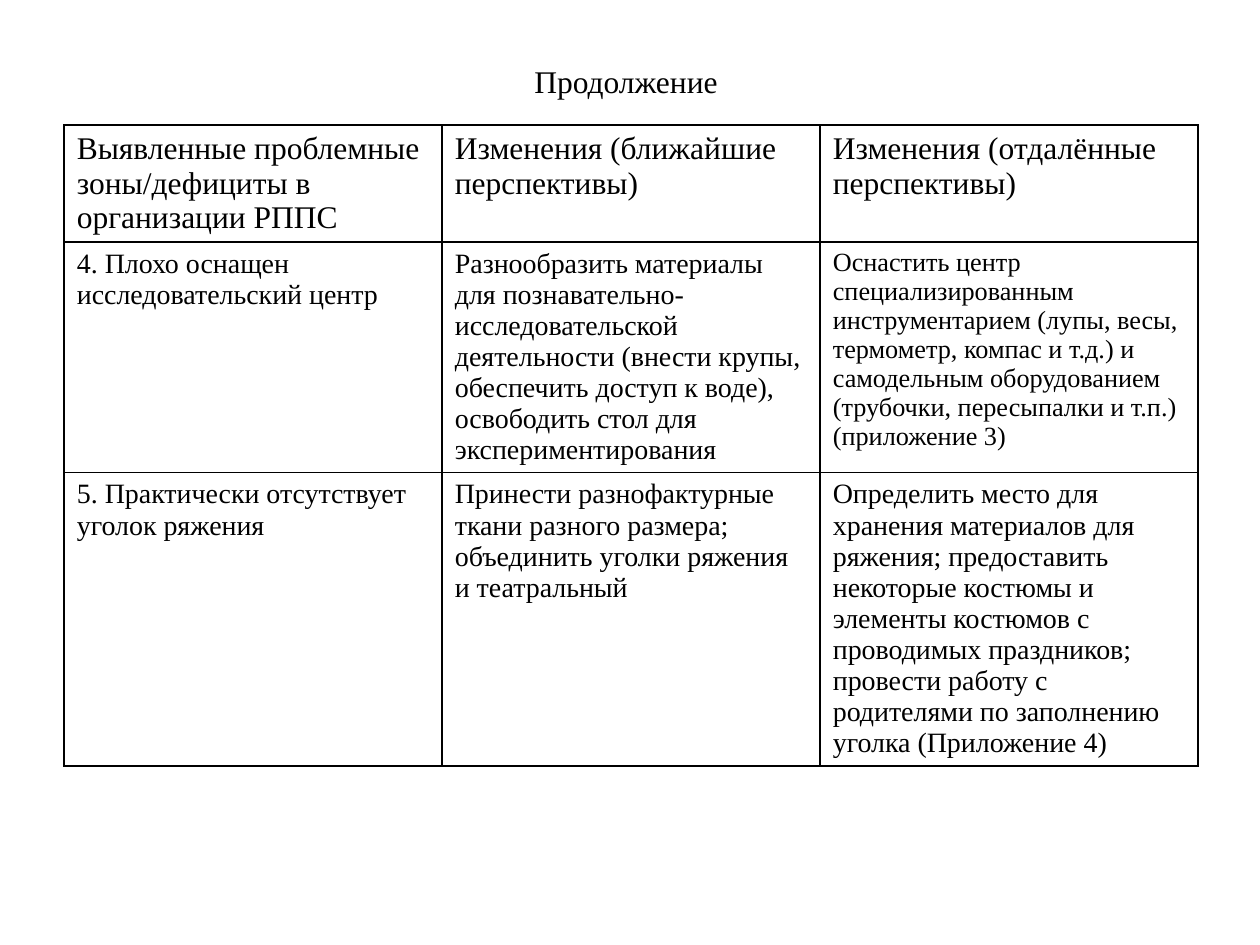
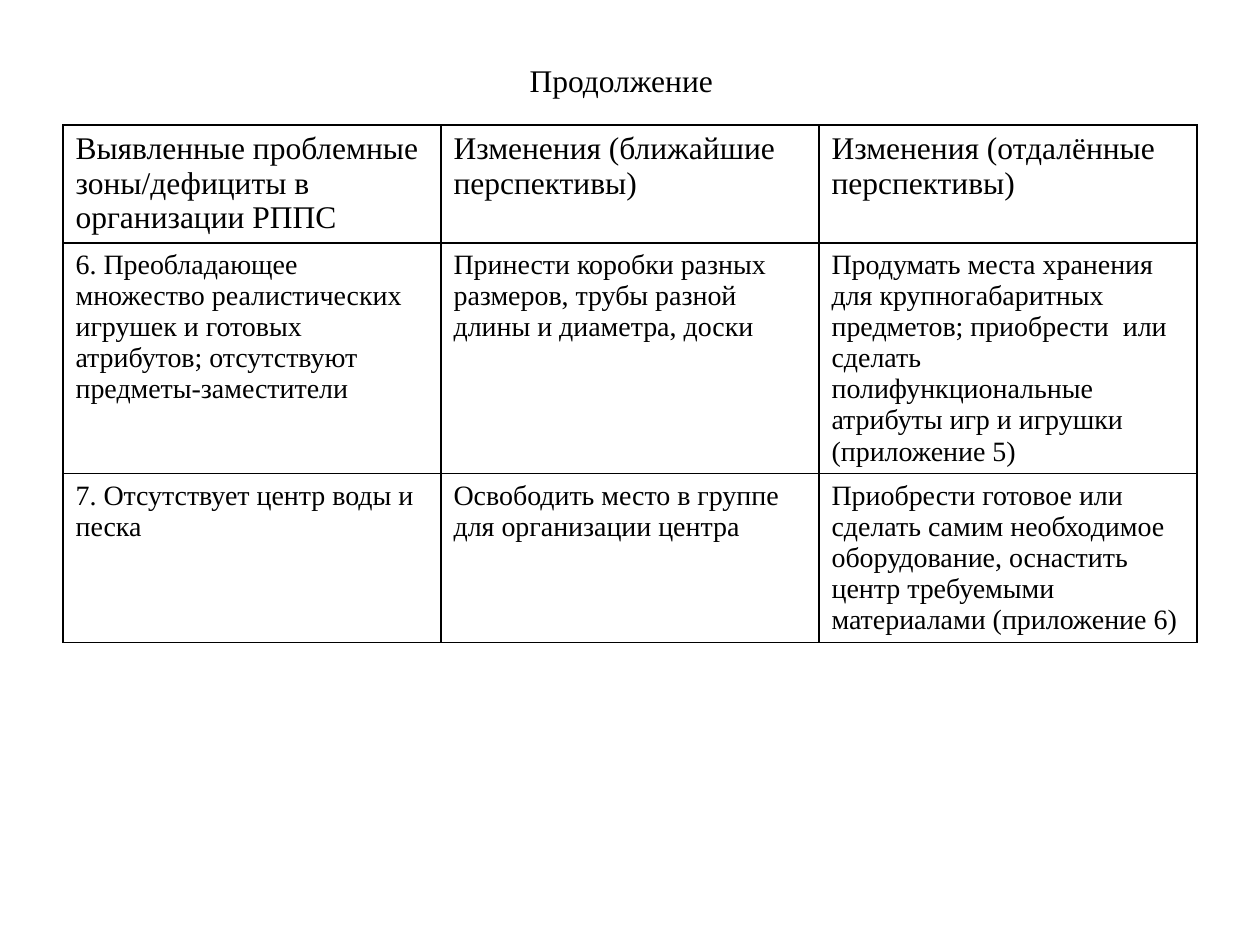
from lxml import etree
from pptx import Presentation
from pptx.dml.color import RGBColor
from pptx.enum.text import MSO_ANCHOR, MSO_AUTO_SIZE, PP_ALIGN
from pptx.oxml.ns import qn
from pptx.util import Inches, Pt

CENTER = PP_ALIGN.CENTER
MIDDLE = MSO_ANCHOR.MIDDLE
NO_AUTOFIT = MSO_AUTO_SIZE.NONE

BLACK = RGBColor(0x00, 0x00, 0x00)
WHITE = RGBColor(0xFF, 0xFF, 0xFF)
FONT = "Times New Roman"
TITLE_LAYOUT = 5
HEADER_SIZE, BODY_SIZE = 18, 16
BORDER_WIDTH = Pt(1)

TITLE = "Продолжение"
HEADINGS = [
    "Выявленные проблемные зоны/дефициты в организации РППС",
    "Изменения (ближайшие перспективы)",
    "Изменения (отдалённые перспективы)",
]
EQUIPMENT_AND_COSTUMES = [
    [
        "4. Плохо оснащен исследовательский центр",
        "Разнообразить материалы для познавательно-исследовательской "
        "деятельности (внести крупы, обеспечить доступ к воде), "
        "освободить стол для экспериментирования",
        "Оснастить центр специализированным инструментарием (лупы, весы, "
        "термометр, компас и т.д.) и самодельным оборудованием "
        "(трубочки, пересыпалки и т.п.) (приложение 3)",
    ],
    [
        "5. Практически отсутствует уголок ряжения",
        "Принести разнофактурные ткани разного размера; "
        "объединить уголки ряжения и театральный",
        "Определить место для хранения материалов для ряжения; предоставить "
        "некоторые костюмы и элементы костюмов с проводимых праздников; "
        "провести работу с родителями по заполнению уголка (Приложение 4)",
    ],
]
TOYS_AND_WATER = [
    [
        "6. Преобладающее множество реалистических игрушек и готовых "
        "атрибутов; отсутствуют предметы-заместители",
        "Принести коробки разных размеров, трубы разной длины и диаметра, доски",
        "Продумать места хранения для крупногабаритных предметов; приобрести  "
        "или сделать полифункциональные атрибуты игр и игрушки (приложение 5)",
    ],
    [
        "7. Отсутствует центр воды и песка",
        "Освободить место в группе для организации центра",
        "Приобрести готовое или сделать самим необходимое оборудование, "
        "оснастить центр требуемыми материалами (приложение 6)",
    ],
]


def style_run(run, size, font=FONT):
    run.font.name = font
    run.font.size = Pt(size)
    run.font.color.rgb = BLACK


def add_title(slide, box, space_font, space_size):
    """Centred title; its closing space sets the line height."""
    title = slide.shapes.title
    title.left, title.top, title.width, title.height = map(Inches, box)
    frame = title.text_frame
    frame.auto_size = NO_AUTOFIT
    frame.vertical_anchor = MIDDLE
    frame.text = TITLE
    line = frame.paragraphs[0]
    line.alignment = CENTER
    style_run(line.runs[0], HEADER_SIZE)
    space = line.add_run()
    space.text = " "
    style_run(space, space_size, space_font)


def add_borders(cell):
    properties = cell._tc.get_or_add_tcPr()
    for side in ("lnL", "lnR", "lnT", "lnB"):
        line = etree.SubElement(properties, qn(f"a:{side}"), w=str(BORDER_WIDTH))
        fill = etree.SubElement(line, qn("a:solidFill"))
        etree.SubElement(fill, qn("a:srgbClr"), val=str(BLACK))


def fill_cell(cell, text, size):
    add_borders(cell)
    cell.fill.solid()
    cell.fill.fore_color.rgb = WHITE
    cell.text_frame.text = text
    style_run(cell.text_frame.paragraphs[0].runs[0], size)


def add_plan_table(slide, left, top, width, row_heights, problems, special_sizes):
    """Header row, then one row per problem, in equal columns."""
    rows = [HEADINGS] + problems
    table = slide.shapes.add_table(
        len(rows), len(HEADINGS), Inches(left), Inches(top),
        Inches(width), Inches(sum(row_heights))).table
    for column in table.columns:
        column.width = Inches(width / len(HEADINGS))
    for r, (texts, height) in enumerate(zip(rows, row_heights)):
        table.rows[r].height = Inches(height)
        row_size = HEADER_SIZE if r == 0 else BODY_SIZE
        for c, text in enumerate(texts):
            fill_cell(table.cell(r, c), text, special_sizes.get((r, c), row_size))


def add_plan_slide(deck, title_height, title_space, table_left, row_heights,
                   problems, special_sizes):
    slide = deck.slides.add_slide(deck.slide_layouts[TITLE_LAYOUT])
    add_title(slide, (0.5, 0.3, 9, title_height), *title_space)
    add_plan_table(slide, table_left, 0.99, 9, row_heights, problems, special_sizes)


def main():
    deck = Presentation()
    deck.slide_width, deck.slide_height = Inches(10), Inches(7.5)

    # Research centre and dressing-up corner
    add_plan_slide(deck, 0.69, (FONT, HEADER_SIZE), 0.51, (0.93, 1.83, 2.33),
                   EQUIPMENT_AND_COSTUMES, {(1, 2): 15})
    # Toys, water and sand
    add_plan_slide(deck, 0.38, ("Calibri", 44), 0.5, (0.94, 1.83, 1.34),
                   TOYS_AND_WATER, {})

    deck.save("out.pptx")


if __name__ == "__main__":
    main()
